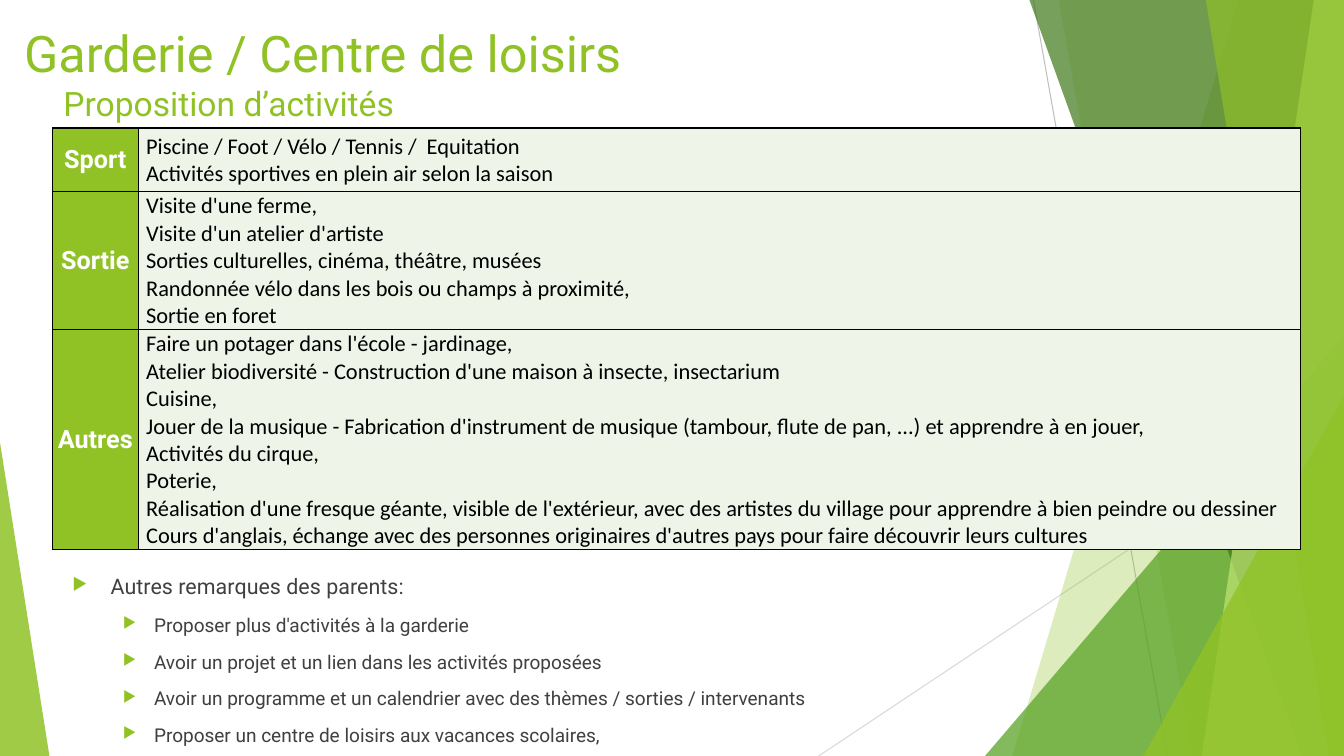
from lxml import etree
from pptx import Presentation
from pptx.dml.color import RGBColor
from pptx.enum.shapes import MSO_CONNECTOR, MSO_SHAPE
from pptx.enum.text import MSO_ANCHOR, PP_ALIGN
from pptx.oxml.ns import qn
from pptx.util import Inches, Pt

STRAIGHT = MSO_CONNECTOR.STRAIGHT
TRIANGLE = MSO_SHAPE.ISOSCELES_TRIANGLE
TOP, MIDDLE = MSO_ANCHOR.TOP, MSO_ANCHOR.MIDDLE
LEFT, CENTER = PP_ALIGN.LEFT, PP_ALIGN.CENTER

WIDTH, HEIGHT = 13.33, 7.5
COLORS = {
    "green": "90C226", "mid_green": "54A021", "dark_green": "3F7819",
    "pale_green": "C0E474", "cell": "EEF4E8", "white": "FFFFFF",
    "black": "000000", "text": "404040", "grey": "BFBFBF", "light_grey": "D9D9D9",
}

TITLE = "Garderie / Centre de loisirs"
SUBTITLE = "Proposition d’activités"
# Each category holds paragraphs; line breaks separate the activities inside one.
ACTIVITIES = [
    ("Sport", ["Piscine / Foot / Vélo / Tennis /  Equitation\n"
               "Activités sportives en plein air selon la saison"]),
    ("Sortie", ["Visite d'une ferme,\n"
                "Visite d'un atelier d'artiste\n"
                "Sorties culturelles, cinéma, théâtre, musées\n"
                "Randonnée vélo dans les bois ou champs à proximité,\n"
                "Sortie en foret"]),
    ("Autres", ["Faire un potager dans l'école - jardinage,\n"
                "Atelier biodiversité - Construction d'une maison à insecte, insectarium\n"
                "Cuisine,\n"
                "Jouer de la musique - Fabrication d'instrument de musique "
                "(tambour, flute de pan, ...) et apprendre à en jouer,\n"
                "Activités du cirque,\n"
                "Poterie,\n"
                "Réalisation d'une fresque géante, visible de l'extérieur, avec des artistes "
                "du village pour apprendre à bien peindre ou dessiner",
                "Cours d'anglais, échange avec des personnes originaires d'autres pays "
                "pour faire découvrir leurs cultures"]),
]
REMARKS_HEADING = "Autres remarques des parents:"
REMARKS = [
    "Proposer plus d'activités à la garderie",
    "Avoir un projet et un lien dans les activités proposées",
    "Avoir un programme et un calendrier avec des thèmes / sorties / intervenants",
    "Proposer un centre de loisirs aux vacances scolaires,",
]

COLUMN_WIDTHS = [0.85, 11.53]
ROW_HEIGHTS = [0.63, 1.37, 2.18]

# start, end, colour
RAYS = [((10.25, 0), (11.58, HEIGHT), "grey"),
        ((WIDTH, 4.03), (8.12, HEIGHT), "light_grey")]
# Facets from back to front. A band gives the x of its left edge at top and bottom
# and reaches the right side; a triangle gives left, top, width, peak position.
FACETS = [
    ("band", (12.28, 10.04), "green", 30),
    ("band", (10.5, 11.83), "green", 20),
    ("triangle", (9.77, 3.33, 3.56, 1), "mid_green", 72),
    ("band", (10.21, 12.91), "dark_green", 70),
    ("band", (13.03, 11.92), "pale_green", 70),
    ("band", (11.96, 13.18), "green", 65),
    ("triangle", (11.34, 3.93, 1.99, 1), "green", 80),
    ("triangle", (0, 4.39, 0.49, 0), "green", 85),
]


def rgb(name):
    return RGBColor.from_string(COLORS[name])


def add_text(paragraph, text, *, size, color, font="Roboto", bold=False, align=LEFT):
    """Append text to a paragraph, turning newlines into line breaks."""
    paragraph.alignment = align
    for index, line in enumerate(text.split("\n")):
        if index:
            paragraph.add_line_break()
        run = paragraph.add_run()
        run.text = line
        run.font.size = Pt(size)
        run.font.name = font
        run.font.bold = bold
        run.font.color.rgb = rgb(color)


def hang(paragraph, margin, indent):
    properties = paragraph._p.get_or_add_pPr()
    properties.set("marL", str(Inches(margin)))
    properties.set("indent", str(Inches(-indent)))
    return properties


def add_bullet(paragraph, margin, indent):
    paragraph.space_before = Pt(10)
    properties = hang(paragraph, margin, indent)
    color = etree.SubElement(properties, qn("a:buClr"))
    etree.SubElement(color, qn("a:srgbClr"), val=COLORS["green"])
    etree.SubElement(properties, qn("a:buSzPct"), val="80000")
    etree.SubElement(properties, qn("a:buChar"), char="▶")


def add_frame(slide, left, top, width, height):
    frame = slide.shapes.add_textbox(*map(Inches, (left, top, width, height))).text_frame
    frame.word_wrap = True
    frame.vertical_anchor = TOP
    return frame


def add_ray(slide, start, end, color):
    ray = slide.shapes.add_connector(STRAIGHT, *map(Inches, start + end))
    ray.line.color.rgb = rgb(color)
    ray.line.width = Pt(0.75)
    etree.SubElement(ray._element.spPr, qn("a:effectLst"))


def add_facet(slide, kind, geometry, color, opacity):
    if kind == "band":
        top_x, bottom_x = geometry
        builder = slide.shapes.build_freeform(Inches(top_x), 0)
        corners = [(WIDTH, 0), (WIDTH, HEIGHT), (bottom_x, HEIGHT)]
        builder.add_line_segments([(Inches(x), Inches(y)) for x, y in corners])
        facet = builder.convert_to_shape()
    else:
        left, top, width, peak = geometry
        facet = slide.shapes.add_shape(
            TRIANGLE, *map(Inches, (left, top, width, HEIGHT - top)))
        facet.adjustments[0] = peak
    facet.shadow.inherit = False
    facet.line.fill.background()
    facet.fill.solid()
    facet.fill.fore_color.rgb = rgb(color)
    fill_color = facet._element.spPr.find(".//" + qn("a:srgbClr"))
    etree.SubElement(fill_color, qn("a:alpha"), val=str(opacity * 1000))


def format_cell(cell, fill, left_margin):
    cell.vertical_anchor = MIDDLE
    cell.margin_left = Inches(left_margin)
    cell.margin_right = cell.margin_top = Inches(0.01)
    cell.margin_bottom = 0
    cell.fill.solid()
    cell.fill.fore_color.rgb = rgb(fill)
    properties = cell._tc.get_or_add_tcPr()
    for index, side in enumerate("LRTB"):
        border = etree.Element(qn(f"a:ln{side}"), w=str(Pt(1)))
        solid = etree.SubElement(border, qn("a:solidFill"))
        etree.SubElement(solid, qn("a:srgbClr"), val=COLORS["black"])
        properties.insert(index, border)


def add_activities(slide):
    table = slide.shapes.add_table(
        len(ACTIVITIES), len(COLUMN_WIDTHS), Inches(0.52), Inches(1.27),
        Inches(sum(COLUMN_WIDTHS)), Inches(sum(ROW_HEIGHTS))).table
    for column, width in zip(table.columns, COLUMN_WIDTHS):
        column.width = Inches(width)
    for row, height, (category, paragraphs) in zip(table.rows, ROW_HEIGHTS, ACTIVITIES):
        row.height = Inches(height)
        category_cell, detail_cell = row.cells
        format_cell(category_cell, "green", 0.01)
        add_text(category_cell.text_frame.paragraphs[0], category,
                 size=18, color="white", bold=True, align=CENTER)
        format_cell(detail_cell, "cell", 0.08)
        details = detail_cell.text_frame
        for index, text in enumerate(paragraphs):
            paragraph = details.add_paragraph() if index else details.paragraphs[0]
            add_text(paragraph, text, size=16, color="black", font="Calibri")


def main():
    deck = Presentation()
    deck.slide_width, deck.slide_height = Inches(WIDTH), Inches(HEIGHT)
    slide = deck.slides.add_slide(deck.slide_layouts[6])

    for ray in RAYS:
        add_ray(slide, *ray)
    for facet in FACETS:
        add_facet(slide, *facet)

    heading = add_frame(slide, 0.14, 0.17, 10.29, 1.44).paragraphs[0]
    hang(heading, 0.39, 0.39)
    add_text(heading, TITLE, size=36, color="green")
    heading.add_line_break()
    add_text(heading, SUBTITLE, size=24, color="green")

    add_activities(slide)

    remarks = add_frame(slide, 0.62, 5.64, 9.4, 1.61)
    add_bullet(remarks.paragraphs[0], 0.38, 0.38)
    add_text(remarks.paragraphs[0], REMARKS_HEADING, size=15.3, color="text")
    for remark in REMARKS:
        paragraph = remarks.add_paragraph()
        paragraph.level = 1
        add_bullet(paragraph, 0.81, 0.31)
        add_text(paragraph, remark, size=13.6, color="text")

    deck.save("out.pptx")


if __name__ == "__main__":
    main()
